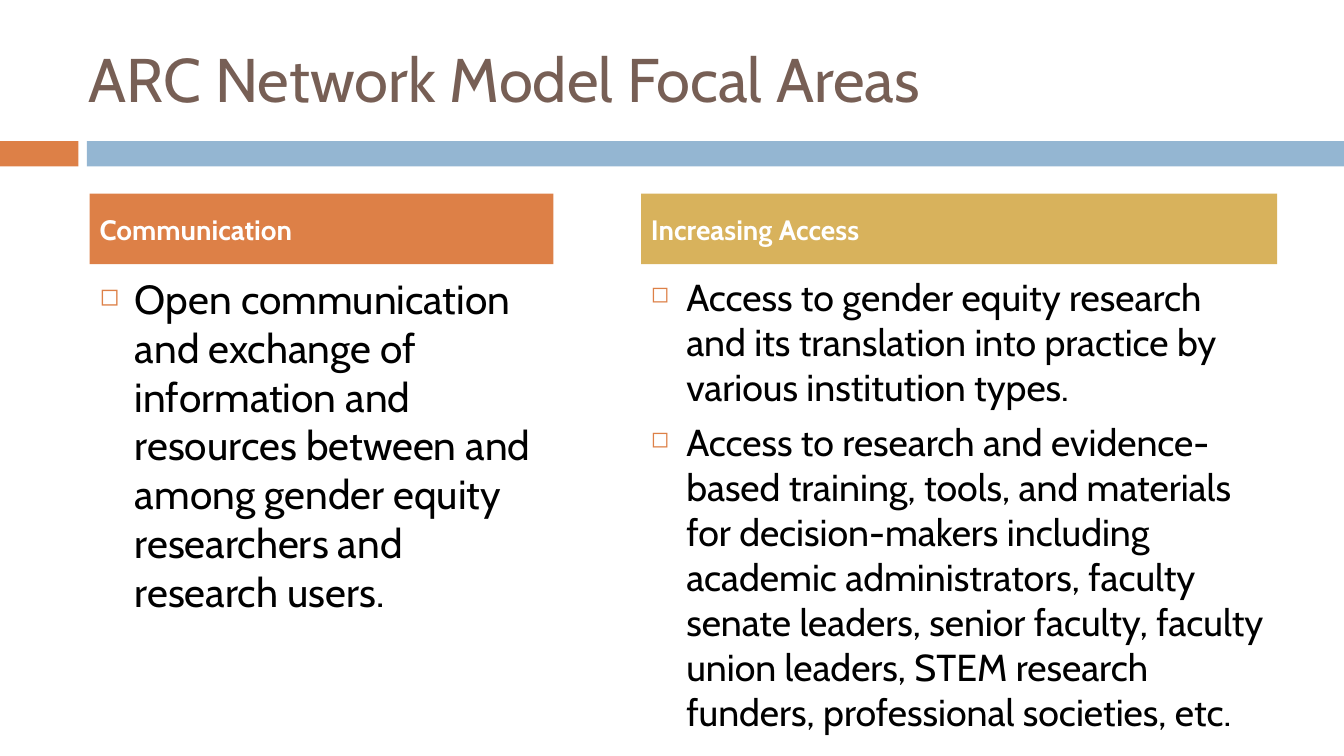
from lxml import etree
from pptx import Presentation
from pptx.dml.color import RGBColor
from pptx.enum.shapes import MSO_SHAPE
from pptx.enum.text import MSO_ANCHOR, PP_ALIGN
from pptx.oxml.ns import qn
from pptx.util import Pt

RECTANGLE = MSO_SHAPE.RECTANGLE
MIDDLE, TOP = MSO_ANCHOR.MIDDLE, MSO_ANCHOR.TOP
LEFT = PP_ALIGN.LEFT

FONT = "Cabin"
SLIDE_WIDTH, SLIDE_HEIGHT = 960, 540
HEADING_HEIGHT, HEADING_GAP = 50.4, 3.6
BULLET_INDENT = 25.2
COLORS = {
    "orange": "DD8047",
    "blue": "94B6D2",
    "gold": "D8B25C",
    "brown": "775F55",
    "black": "000000",
    "white": "FFFFFF",
}
COLUMNS = [
    {
        "box": (64.08, 138.24, 331.2, 336.24),
        "heading": "Communication",
        "fill": "orange",
        "size": 29,
        "bullets": [
            "Open communication and exchange of information and resources "
            "between and among gender equity researchers and research users.",
        ],
    },
    {
        "box": (457.92, 138.24, 454.32, 368.64),
        "heading": "Increasing Access",
        "fill": "gold",
        "size": 26.8,
        "bullets": [
            "Access to gender equity research and its translation into practice "
            "by various institution types.",
            "Access to research and evidence-based training, tools, and materials "
            "for decision-makers including academic administrators, faculty senate "
            "leaders, senior faculty, faculty union leaders, STEM research funders, "
            "professional societies, etc.",
        ],
    },
]


def color(name):
    return RGBColor.from_string(COLORS[name])


def set_attributes(target, values):
    for name, value in values.items():
        setattr(target, name, value)


def add_bar(slide, box, fill):
    shape = slide.shapes.add_shape(RECTANGLE, *map(Pt, box))
    shape.shadow.inherit = False
    shape.fill.solid()
    shape.fill.fore_color.rgb = color(fill)
    shape.line.fill.background()
    return shape


def add_bullet(paragraph):
    properties = paragraph._p.get_or_add_pPr()
    properties.set("marL", str(Pt(BULLET_INDENT)))
    properties.set("indent", str(-Pt(BULLET_INDENT)))
    bullet_color = etree.SubElement(properties, qn("a:buClr"))
    etree.SubElement(bullet_color, qn("a:srgbClr"), val=COLORS["orange"])
    etree.SubElement(properties, qn("a:buSzPct"), val="60000")
    etree.SubElement(properties, qn("a:buChar"), char="◻")


def write_text(shape, texts, size, ink, anchor, bold=False, before=0, bulleted=False):
    frame = shape.text_frame
    set_attributes(frame, {"word_wrap": True, "vertical_anchor": anchor})
    frame.text = "\n".join(texts)
    for paragraph in frame.paragraphs:
        set_attributes(paragraph, {"alignment": LEFT, "space_before": Pt(before)})
        font = paragraph.runs[0].font
        set_attributes(font, {"name": FONT, "size": Pt(size), "bold": bold})
        font.color.rgb = color(ink)
        if bulleted:
            add_bullet(paragraph)


def add_title(slide, box, text):
    shape = slide.shapes.add_textbox(*map(Pt, box))
    write_text(shape, [text], 44, "brown", MIDDLE)


def add_band(slide, box):
    left, top, width, height = box
    accent_width, gap = 56, 6
    rest = accent_width + gap
    add_bar(slide, (left, top, accent_width, height), "orange")
    add_bar(slide, (left + rest, top, width - rest, height), "blue")


def add_column(slide, box, heading, fill, size, bullets):
    left, top, width, height = box
    header = add_bar(slide, (left, top, width, HEADING_HEIGHT), fill)
    write_text(header, [heading], 20, "white", MIDDLE, bold=True, before=7)
    offset = HEADING_HEIGHT + HEADING_GAP
    body_box = (left, top + offset, width, height - offset)
    body = slide.shapes.add_textbox(*map(Pt, body_box))
    write_text(body, bullets, size, "black", TOP, before=7, bulleted=True)


def main():
    presentation = Presentation()
    set_attributes(
        presentation,
        {"slide_width": Pt(SLIDE_WIDTH), "slide_height": Pt(SLIDE_HEIGHT)},
    )
    slide = presentation.slides.add_slide(presentation.slide_layouts[6])
    add_band(slide, (0, 100.8, SLIDE_WIDTH, 18))
    add_title(slide, (56.16, 21.6, 856.08, 68.4), "ARC Network Model Focal Areas")
    for column in COLUMNS:
        add_column(slide, **column)
    presentation.save("out.pptx")


if __name__ == "__main__":
    main()
